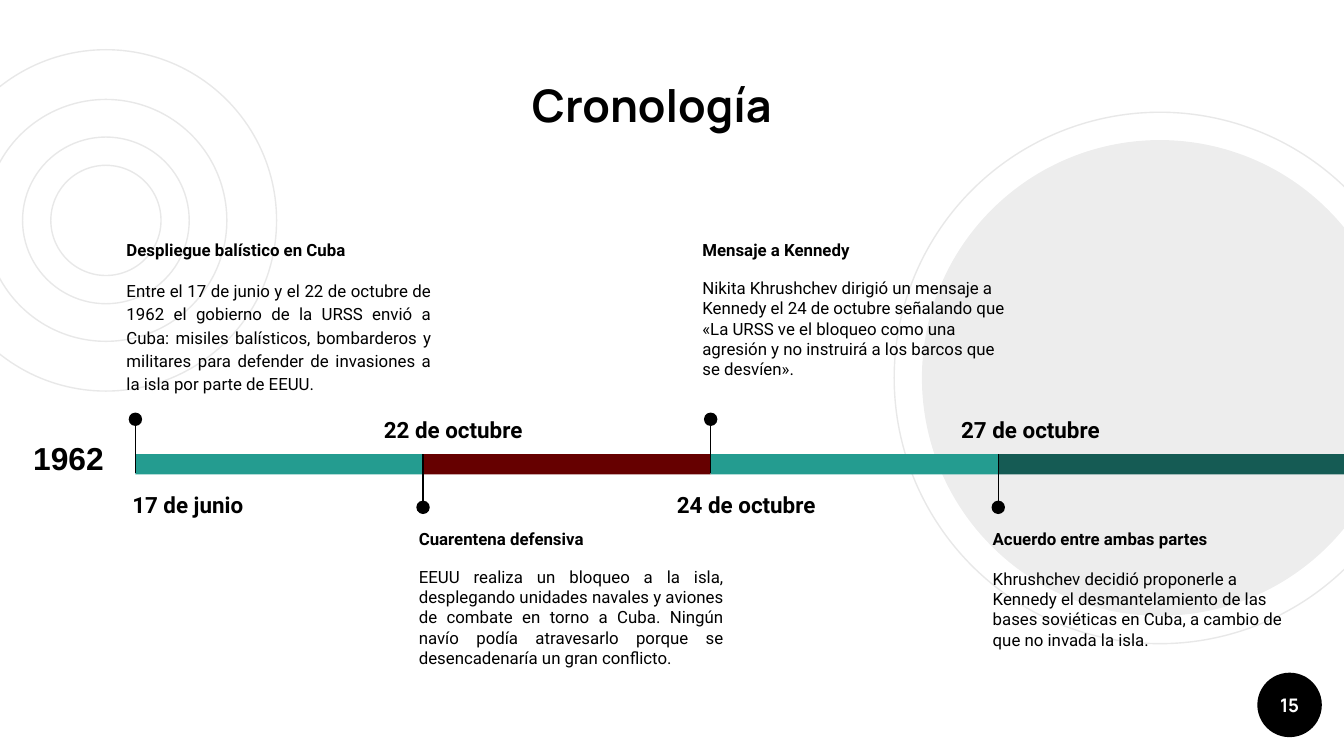
from dataclasses import dataclass

from lxml.etree import SubElement
from pptx import Presentation
from pptx.dml.color import RGBColor
from pptx.enum.shapes import MSO_CONNECTOR, MSO_SHAPE
from pptx.enum.text import MSO_ANCHOR, MSO_AUTO_SIZE, PP_ALIGN
from pptx.oxml.ns import qn
from pptx.util import Inches, Pt


@dataclass(frozen=True)
class Theme:
    ink: str = "000000"
    paper: str = "FFFFFF"
    ring: str = "E8E8E8"
    teal: str = "249C90"
    maroon: str = "660000"
    deep: str = "155B54"
    head_font: str = "Manrope"
    body_font: str = "Roboto"
    year_font: str = "Arial"
    title: int = 24
    year: int = 17
    date: int = 12
    page: int = 10
    body: int = 9
    line: float = 0.75


@dataclass(frozen=True)
class Box:
    x: float
    y: float
    w: float
    h: float


@dataclass(frozen=True)
class Event:
    date: str
    head: str
    body: str
    color: str
    above: bool         # story above the bar, date below it
    date_dx: float      # from stem to middle of the date
    story_dx: float     # from stem to left of the story
    gap: float          # points between heading and body
    justify: bool = False
    spacing: float = 1.0


T = Theme()
COLS = 100              # grid of tenths of an inch
ROWS = COLS * 9 / 16

EVENTS = [
    Event("17 de junio", "Despliegue balístico en Cuba",
          "Entre el 17 de junio y el 22 de octubre de 1962 el gobierno de la URSS envió a Cuba: "
          "misiles balísticos, bombarderos y militares para defender de invasiones a la isla "
          "por parte de EEUU.",
          T.teal, True, 3.9, -1.65, 9.5, True, 1.15),
    Event("22 de octubre", "Cuarentena defensiva",
          "EEUU realiza un bloqueo a la isla, desplegando unidades navales y aviones de combate "
          "en torno a Cuba. Ningún navío podía atravesarlo porque se desencadenaría un gran "
          "conflicto.",
          T.maroon, False, 2.25, -1.3, 9.5, True),
    Event("24 de octubre", "Mensaje a Kennedy",
          "Nikita Khrushchev dirigió un mensaje a Kennedy el 24 de octubre señalando que «La URSS "
          "ve el bloqueo como una agresión y no instruirá a los barcos que se desvíen».",
          T.teal, True, 2.65, -1.6, 9.5),
    Event("27 de octubre", "Acuerdo entre ambas partes",
          "Khrushchev decidió proponerle a Kennedy el desmantelamiento de las bases soviéticas en "
          "Cuba, a cambio de que no invada la isla.",
          T.deep, False, 2.4, -1.4, 10.5),
]


def u(n):
    return Inches(n / 10)


def place(box):
    return u(box.x), u(box.y), u(box.w), u(box.h)


def rgb(color):
    return RGBColor.from_string(color)


def shape(s, kind, box, fill=None, line=None, alpha=None):
    sp = s.shapes.add_shape(kind, *place(box))
    sp.shadow.inherit = False
    if fill:
        sp.fill.solid()
        sp.fill.fore_color.rgb = rgb(fill)
        if alpha:
            clr = sp.fill._xPr.find(qn("a:solidFill"))[0]
            SubElement(clr, qn("a:alpha"), val=str(alpha * 1000))
    else:
        sp.fill.background()
    if line:
        sp.line.color.rgb = rgb(line)
        sp.line.width = Pt(T.line)
    else:
        sp.line.fill.background()
    return sp


def circle(s, cx, cy, r, **style):
    return shape(s, MSO_SHAPE.OVAL, Box(cx - r, cy - r, 2 * r, 2 * r), **style)


def frame(sp, anchor=MSO_ANCHOR.TOP):
    tf = sp.text_frame
    tf.word_wrap = True
    tf.auto_size = MSO_AUTO_SIZE.NONE
    tf.vertical_anchor = anchor
    tf.margin_left = tf.margin_right = tf.margin_top = tf.margin_bottom = u(1)
    return tf


def write(p, text, size, font=T.body_font, color=T.ink, bold=True, align=PP_ALIGN.LEFT):
    p.text = text
    p.alignment = align
    f = p.runs[0].font
    f.name, f.size, f.bold = font, Pt(size), bold
    f.color.rgb = rgb(color)


def text_box(s, box):
    return frame(s.shapes.add_textbox(*place(box)))


def backdrop(s, box):
    # Concentric rings at left
    for r in (12.7, 9, 6.2, 4.1):
        circle(s, box.x + 7.88, box.y + 16.4, r, line=T.ring)
    # Ringed disc at right
    cx, cy = box.x + box.w - 13.7, box.y + box.h / 2
    circle(s, cx, cy, 19.77, line=T.ring)
    circle(s, cx, cy, 17.7, fill=T.ink, alpha=7)


def page_badge(s, box, number):
    sp = shape(s, MSO_SHAPE.OVAL, box, fill=T.ink)
    tf = frame(sp, MSO_ANCHOR.MIDDLE)
    tf.margin_left = tf.margin_right = 0
    write(tf.paragraphs[0], number, T.page, T.head_font, T.paper, align=PP_ALIGN.CENTER)


def title(s, box, text):
    sp = s.shapes.title
    sp.left, sp.top, sp.width, sp.height = place(box)
    write(frame(sp).paragraphs[0], text, T.title, T.head_font, align=PP_ALIGN.CENTER)


def event(s, box, e):
    bar_y = box.y + 17
    story_y, date_y, stem_y, dot_y = (
        (0.05, 18.45, 14.5, 14.4) if e.above else (21.55, 12.85, 17, 20.95))
    # Bar
    shape(s, MSO_SHAPE.RECTANGLE, Box(box.x, bar_y, box.w, 1.5), fill=e.color)
    # Stem and dot
    top = box.y + stem_y
    stem = s.shapes.add_connector(MSO_CONNECTOR.STRAIGHT, u(box.x), u(top), u(box.x), u(top + 3.9))
    stem.line.color.rgb = rgb(T.ink)
    stem.line.width = Pt(T.line)
    SubElement(stem._element.spPr, qn("a:effectLst"))
    circle(s, box.x, box.y + dot_y, 0.5, fill=T.ink)
    # Date
    p = text_box(s, Box(box.x + e.date_dx - 7, box.y + date_y, 14, 4.1)).paragraphs[0]
    write(p, e.date, T.date, align=PP_ALIGN.CENTER)
    p.line_spacing = 1.15
    # Story
    tf = text_box(s, Box(box.x + e.story_dx, box.y + story_y, 24.6, 10.3))
    p = tf.paragraphs[0]
    write(p, e.head, T.body)
    p.space_after = Pt(e.gap)
    p = tf.add_paragraph()
    write(p, e.body, T.body, bold=False, align=PP_ALIGN.JUSTIFY if e.justify else PP_ALIGN.LEFT)
    p.line_spacing = e.spacing


def timeline(s, box, year, events, step=21.4):
    last = len(events) - 1
    for i, e in enumerate(events):
        w = box.w - last * step if i == last else step
        event(s, Box(box.x + i * step, box.y, w, box.h), e)
    # Year at the start of the bar
    tf = text_box(s, Box(box.x - 8.6, box.y + 14.85, 7.8, 4.2))
    write(tf.paragraphs[0], year, T.year, T.year_font)


def main():
    prs = Presentation()
    prs.slide_width, prs.slide_height = u(COLS), u(ROWS)
    s = prs.slides.add_slide(prs.slide_layouts[5])
    backdrop(s, Box(0, 0, COLS, ROWS))
    page_badge(s, Box(COLS - 6.45, ROWS - 6.2, 4.8, 4.8), "15")
    timeline(s, Box(10.08, 16.8, COLS - 10.08, 32.8), "1962", EVENTS)
    title(s, Box(18.3, 4.8, 60.4, 7.1), "Cronología")
    prs.save("out.pptx")


if __name__ == "__main__":
    main()
